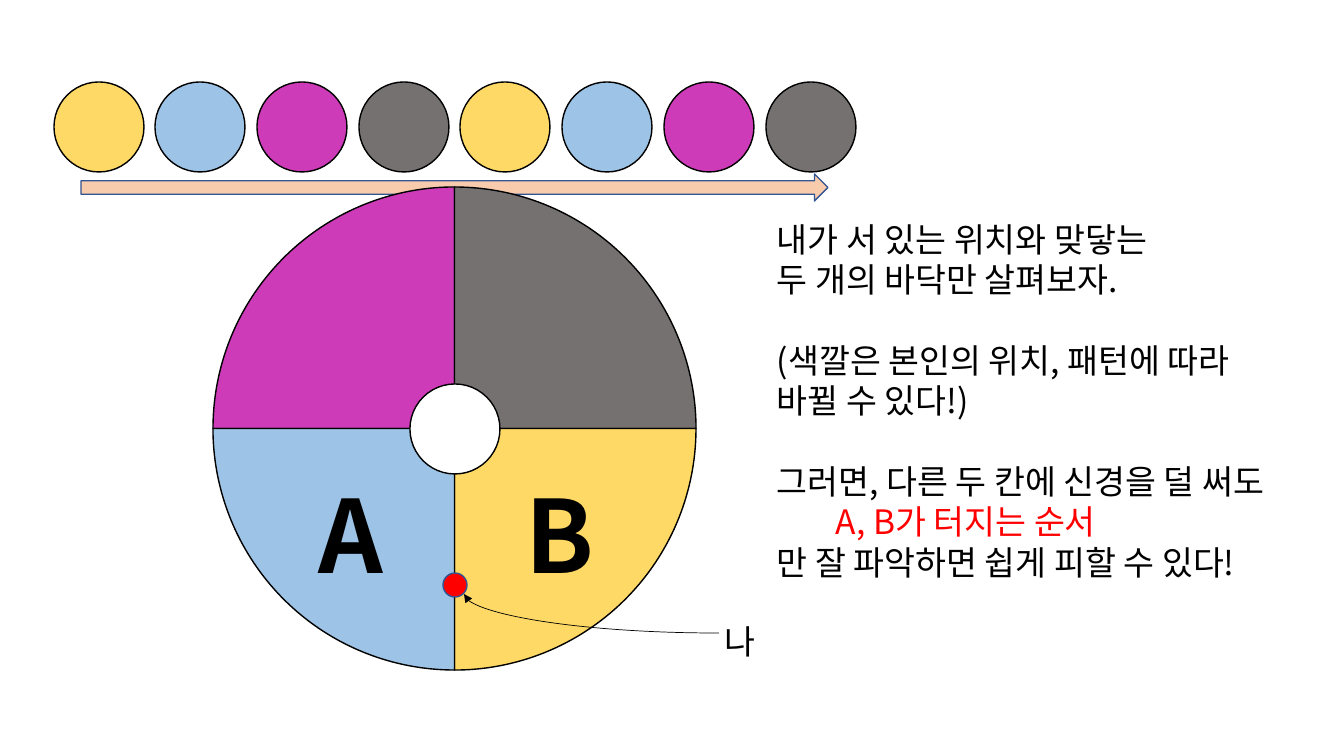
from lxml import etree
from pptx import Presentation
from pptx.dml.color import RGBColor
from pptx.enum.shapes import MSO_CONNECTOR, MSO_SHAPE
from pptx.enum.text import PP_ALIGN
from pptx.oxml.ns import qn
from pptx.util import Emu, Pt

PX = 914400 / 100.8
FONT = "Noto Sans CJK KR"
BLACK, WHITE, RED, NAVY = "000000", "FFFFFF", "FF0000", "325491"
YELLOW, BLUE, MAGENTA, GRAY = "FFD966", "9DC3E6", "CD3BB8", "767171"
PATTERN = [YELLOW, BLUE, MAGENTA, GRAY]
QUADRANTS = [MAGENTA, GRAY, YELLOW, BLUE]  # clockwise from top left
BLANK_LINE = 28.8

# text, colour, indent in px, space before in points
ADVICE = [
    ("내가 서 있는 위치와 맞닿는", BLACK, 0, 0),
    ("두 개의 바닥만 살펴보자.", BLACK, 0, 0),
    ("(색깔은 본인의 위치, 패턴에 따라", BLACK, 0, BLANK_LINE),
    ("바뀔 수 있다!)", BLACK, 0, 0),
    ("그러면, 다른 두 칸에 신경을 덜 써도", BLACK, 0, BLANK_LINE),
    ("A, B가 터지는 순서", RED, 59, 0),
    ("만 잘 파악하면 쉽게 피할 수 있다!", BLACK, 0, 0),
]


def px(length):
    return Emu(round(length * PX))


def color(value):
    return RGBColor.from_string(value)


def add_shape(slide, kind, left, top, width, height, fill, line=BLACK):
    shape = slide.shapes.add_shape(kind, px(left), px(top), px(width), px(height))
    shape.shadow.inherit = False
    shape.fill.solid()
    shape.fill.fore_color.rgb = color(fill)
    shape.line.color.rgb = color(line)
    shape.line.width = Pt(1)
    return shape


def add_text_frame(slide, left, top, width, height):
    box = slide.shapes.add_textbox(px(left), px(top), px(width), px(height))
    box.text_frame.word_wrap = False
    return box.text_frame


def write(paragraph, text, size=24, fill=BLACK, bold=False, align=PP_ALIGN.LEFT,
          indent=0, before=0):
    paragraph.alignment = align
    paragraph.line_spacing = Pt(size * 1.2)
    paragraph.space_before = Pt(before)
    if indent:
        paragraph._p.get_or_add_pPr().set("marL", str(px(indent)))
    run = paragraph.add_run()
    run.text = text
    run.font.size = Pt(size)
    run.font.bold = bold
    run.font.name = FONT
    run.font.color.rgb = color(fill)
    etree.SubElement(run._r.get_or_add_rPr(), qn("a:ea"), typeface=FONT)


def add_label(slide, text, left, top, width, height, **text_format):
    frame = add_text_frame(slide, left, top, width, height)
    write(frame.paragraphs[0], text, align=PP_ALIGN.CENTER, **text_format)


def add_advice(slide):
    frame = add_text_frame(slide, 767, 214, 575, 377)
    for index, (text, fill, indent, before) in enumerate(ADVICE):
        paragraph = frame.add_paragraph() if index else frame.paragraphs[0]
        write(paragraph, text, fill=fill, indent=indent, before=before)


def add_wheel(slide):
    for index, fill in enumerate(QUADRANTS):
        quadrant = add_shape(slide, MSO_SHAPE.PIE, 213, 187, 483, 483, fill)
        quadrant.adjustments[0] = 108
        quadrant.adjustments[1] = 162
        quadrant.rotation = 90 * index
    add_shape(slide, MSO_SHAPE.OVAL, 410, 384, 90, 90, WHITE)


def add_pattern_row(slide):
    for index, fill in enumerate(PATTERN * 2):
        add_shape(slide, MSO_SHAPE.OVAL, 54 + 712 * index // 7, 82, 90, 90, fill)


def add_curved_pointer(slide, left, top, width, height):
    """Quarter curve turned by 270 degrees, with its arrowhead at the start."""
    pointer = slide.shapes.add_connector(
        MSO_CONNECTOR.CURVE, px(left + width), px(top), px(left), px(top + height))
    pointer.line.color.rgb = color(BLACK)
    pointer.line.width = Pt(0.5)
    properties = pointer._element.spPr
    properties.find(qn("a:xfrm")).set("rot", str(270 * 60000))
    properties.find(qn("a:prstGeom")).set("prst", "curvedConnector2")
    etree.SubElement(properties.find(qn("a:ln")), qn("a:headEnd"), type="triangle")
    etree.SubElement(properties, qn("a:effectLst"))


def main():
    presentation = Presentation()
    presentation.slide_width, presentation.slide_height = px(1344), px(756)
    slide = presentation.slides.add_slide(presentation.slide_layouts[6])
    add_shape(slide, MSO_SHAPE.RIGHT_ARROW, 81, 174, 747, 27, "F8CBAD", NAVY)
    add_wheel(slide)
    add_label(slide, "A", 305, 468, 92, 132, size=72, bold=True)
    add_label(slide, "B", 516, 468, 86, 132, size=72, bold=True)
    add_pattern_row(slide)
    add_shape(slide, MSO_SHAPE.OVAL, 443, 573, 24, 24, RED, NAVY)
    add_curved_pointer(slide, 572, 486, 39, 255)
    add_label(slide, "나", 713, 616, 54, 50)
    add_advice(slide)
    presentation.save("out.pptx")


if __name__ == "__main__":
    main()
